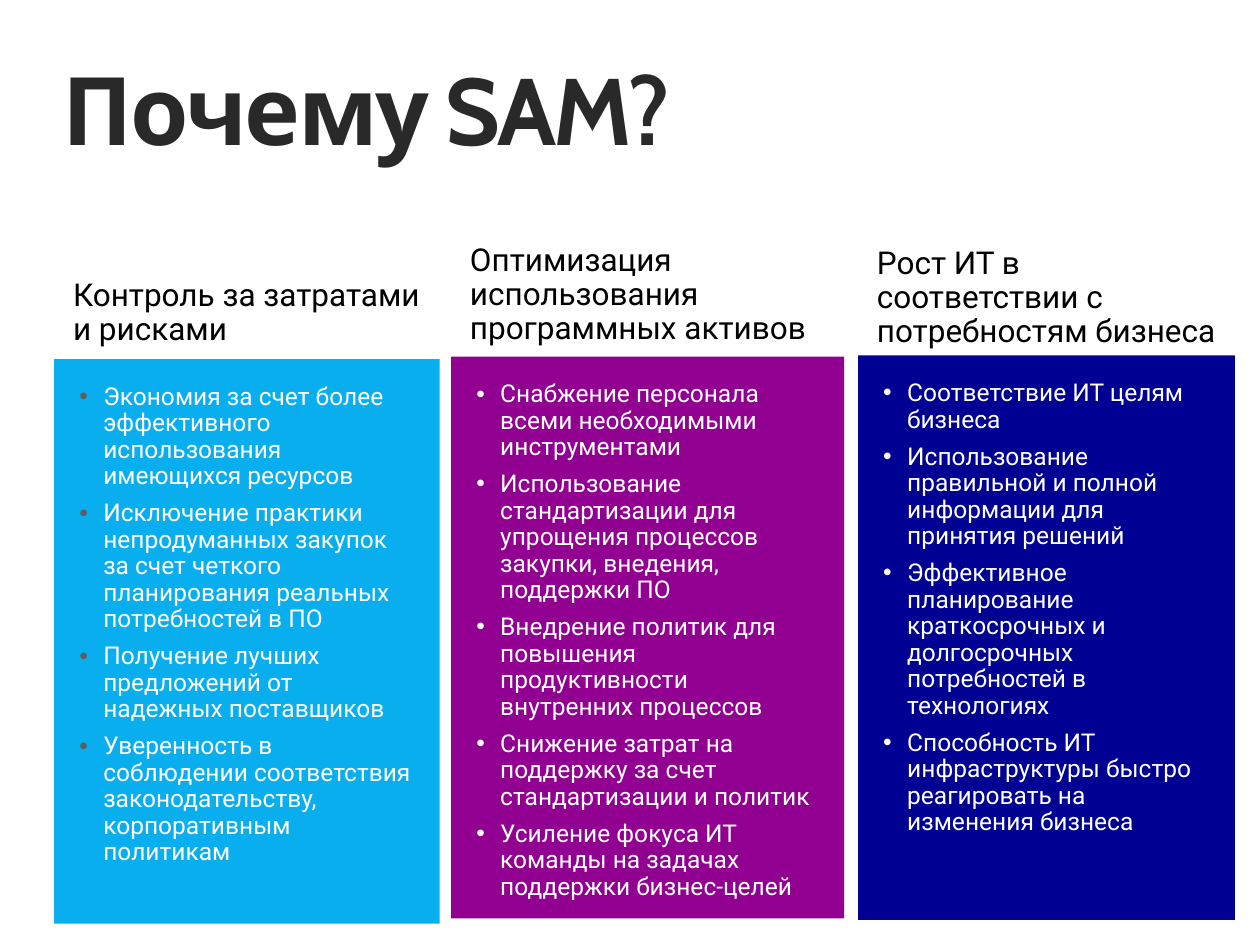
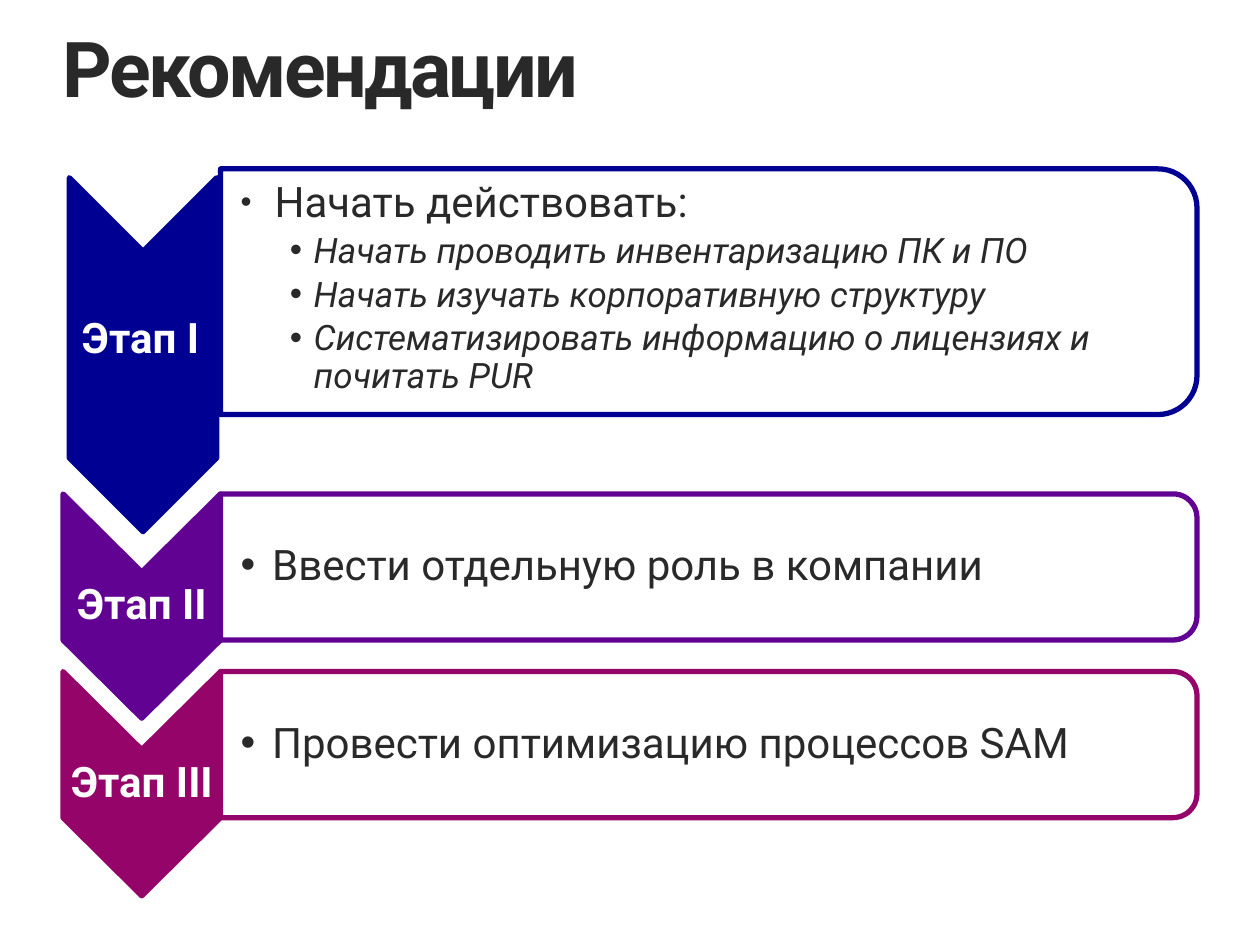
"""Build two slides on software asset management: reasons and recommended stages."""
import math

from lxml import etree
from pptx import Presentation
from pptx.dml.color import RGBColor
from pptx.enum.shapes import MSO_SHAPE
from pptx.enum.text import MSO_ANCHOR, PP_ALIGN
from pptx.oxml.ns import qn
from pptx.util import Inches, Pt

RECT, CHEVRON = MSO_SHAPE.RECTANGLE, MSO_SHAPE.CHEVRON
TOP, MIDDLE, BOTTOM = MSO_ANCHOR.TOP, MSO_ANCHOR.MIDDLE, MSO_ANCHOR.BOTTOM
LEFT, CENTER = PP_ALIGN.LEFT, PP_ALIGN.CENTER

COLORS = {"white": "FFFFFF", "black": "000000", "ink": "292929", "grey": "5E5E5E",
          "sky": "09AEEF", "magenta": "910091", "navy": "000092",
          "violet": "610293", "plum": "950469"}
BODY_FONT = "Roboto"

REASONS_TITLE = "Почему SAM?"
REASONS = [
    {"heading": "Контроль за затратами и рисками",
     "left": 0.43, "top": 2.85, "width": 3.06, "height": 4.48,
     "fill": "sky", "bullet": "grey",
     "points": [
         "Экономия за счет более эффективного использования имеющихся ресурсов",
         "Исключение практики непродуманных закупок за счет четкого планирования "
         "реальных потребностей в ПО",
         "Получение лучших предложений от надежных поставщиков",
         "Уверенность в соблюдении соответствия законодательству, корпоративным политикам"]},
    {"heading": "Оптимизация использования программных активов",
     "left": 3.58, "top": 2.83, "width": 3.12, "height": 4.46,
     "fill": "magenta", "bullet": "white",
     "points": [
         "Снабжение персонала всеми необходимыми инструментами",
         "Использование стандартизации для упрощения процессов закупки, внедения, поддержки ПО",
         "Внедрение политик для повышения продуктивности внутренних процессов",
         "Снижение затрат на поддержку за счет стандартизации и политик",
         "Усиление фокуса ИТ команды на задачах поддержки бизнес-целей"]},
    {"heading": "Рост ИТ в соответствии с потребностям бизнеса",
     "left": 6.81, "top": 2.82, "width": 2.99, "height": 4.48,
     "fill": "navy", "bullet": "white",
     "points": [
         "Соответствие ИТ целям бизнеса",
         "Использование правильной и полной информации для принятия решений",
         "Эффективное планирование краткосрочных и долгосрочных потребностей в технологиях",
         "Способность ИТ инфраструктуры быстро реагировать на изменения бизнеса"]},
]
HEADING_HEIGHT = 1.07
HEADING_TOPS = (1.79, 1.78, 1.8)

STAGES_TITLE = "Рекомендации"
FIRST_STAGE = ("Этап I", "Начать действовать:", [
    "Начать проводить инвентаризацию ПК и ПО",
    "Начать изучать корпоративную структуру",
    "Систематизировать информацию о лицензиях и почитать PUR"])
LATER_STAGES = [("Этап II", "Ввести отдельную роль в компании", "violet"),
                ("Этап III", "Провести оптимизацию процессов SAM", "plum")]
STAGE_LEFT, STAGE_WIDTH, STAGE_HEIGHT, STAGE_POINT = 0.5, 1.25, 1.16, 0.62
STAGE_TOP, STAGE_PITCH = 3.92, 1.41
TASK_LEFT, TASK_WIDTH = 1.75, 7.75
ARC_STEPS = 12


def rgb(name):
    return RGBColor.from_string(COLORS[name])


def paint(shape, fill, line=None):
    shape.shadow.inherit = False
    shape.fill.solid()
    shape.fill.fore_color.rgb = rgb(fill)
    if line is None:
        shape.line.fill.background()
        return shape
    shape.line.color.rgb = rgb(line)
    shape.line.width = Pt(3)
    etree.SubElement(shape.line._ln, qn("a:round"))
    return shape


def write(shape, paragraphs, insets=(0.1, 0.05, 0.1, 0.05), anchor=TOP, **shared):
    """Fill a shape with (text, format) paragraphs; shared formats are defaults."""
    frame = shape.text_frame
    frame.word_wrap = True
    frame.vertical_anchor = anchor
    (frame.margin_left, frame.margin_top,
     frame.margin_right, frame.margin_bottom) = map(Inches, insets)
    for index, (text, own) in enumerate(paragraphs):
        style = {**shared, **own}
        paragraph = frame.paragraphs[0] if index == 0 else frame.add_paragraph()
        paragraph.alignment = style.get("align", LEFT)
        paragraph.line_spacing = style.get("spacing", 0.9)
        if index and "before" in style:
            paragraph.space_before = Pt(style["before"])
        if "after" in style:
            paragraph.space_after = Pt(style["after"])
        if "bullet" in style:
            add_bullet(paragraph, **style["bullet"])
        run = paragraph.add_run()
        run.text = text
        font = run.font
        font.name = style.get("font", BODY_FONT)
        font.size = Pt(style["size"])
        font.bold = style.get("bold", False)
        font.italic = style.get("italic", False)
        font.color.rgb = rgb(style["color"])
        if "tracking" in style:
            run._r.get_or_add_rPr().set("spc", str(int(style["tracking"] * 100)))


def add_bullet(paragraph, color, left, hang, percent=100):
    properties = paragraph._p.get_or_add_pPr()
    properties.set("marL", str(Inches(left)))
    properties.set("indent", str(-Inches(hang)))
    bullet_color = etree.SubElement(properties, qn("a:buClr"))
    etree.SubElement(bullet_color, qn("a:srgbClr"), val=COLORS[color])
    etree.SubElement(properties, qn("a:buSzPct"), val=str(percent * 1000))
    etree.SubElement(properties, qn("a:buFont"), typeface="Arial")
    etree.SubElement(properties, qn("a:buChar"), char="•")


def add_box(slide, kind, left, top, width, height):
    return slide.shapes.add_shape(kind, *map(Inches, (left, top, width, height)))


def add_text_box(slide, left, top, width, height):
    return slide.shapes.add_textbox(*map(Inches, (left, top, width, height)))


def add_title(slide, text, top, height, size, font=BODY_FONT):
    write(add_text_box(slide, 0.5, top, 9, height), [(text, {})], insets=(0, 0, 0, 0),
          size=size, font=font, color="ink", bold=True, tracking=-1.5)


def add_outline(slide, points):
    corners = [(Inches(x), Inches(y)) for x, y in points]
    builder = slide.shapes.build_freeform(*corners[0])
    builder.add_line_segments(corners[1:], close=True)
    return builder.convert_to_shape()


def add_task_box(slide, top, height, radius, line):
    """Draw a box whose two right corners are rounded."""
    right, bottom = TASK_LEFT + TASK_WIDTH, top + height
    points = [(TASK_LEFT, bottom), (TASK_LEFT, top)]
    for center_y, start in ((top + radius, -90), (bottom - radius, 0)):
        for step in range(ARC_STEPS + 1):
            angle = math.radians(start + 90 * step / ARC_STEPS)
            points.append((right - radius + radius * math.cos(angle),
                           center_y + radius * math.sin(angle)))
    return paint(add_outline(slide, points), "white", line)


def add_stage_arrow(slide, top, color):
    middle, right = STAGE_LEFT + STAGE_WIDTH / 2, STAGE_LEFT + STAGE_WIDTH
    bottom = top + STAGE_HEIGHT
    points = [(right, top), (right, bottom), (middle, bottom + STAGE_POINT),
              (STAGE_LEFT, bottom), (STAGE_LEFT, top), (middle, top + STAGE_POINT)]
    return paint(add_outline(slide, points), color, color)


def build_reasons(slide):
    add_title(slide, REASONS_TITLE, 0.51, 0.82, 54, "Cabin")
    for reason, heading_top in zip(REASONS, HEADING_TOPS):
        left, width = reason["left"], reason["width"]
        heading = paint(add_box(slide, RECT, left, heading_top, width, HEADING_HEIGHT), "white")
        write(heading, [(reason["heading"], {})], insets=(0.15, 0.05, 0.15, 0.1),
              anchor=BOTTOM, size=18, color="black")
        panel = paint(add_box(slide, RECT, left, reason["top"], width, reason["height"]),
                      reason["fill"])
        write(panel, [(point, {}) for point in reason["points"]],
              insets=(0.2, 0.2, 0.2, 0.05), size=14, color="white", before=6,
              bullet={"color": reason["bullet"], "left": 0.19, "hang": 0.19})


def build_stages(slide):
    add_title(slide, STAGES_TITLE, 0.25, 0.67, 44)
    for index, (stage, task, color) in enumerate(LATER_STAGES):
        top = STAGE_TOP + index * STAGE_PITCH
        write(add_stage_arrow(slide, top, color), [(stage, {})],
              insets=(0.01, 0.64, 0.01, 0.64), anchor=MIDDLE, align=CENTER,
              size=24, color="white", bold=True)
        write(add_task_box(slide, top, STAGE_HEIGHT, 0.19, color), [(task, {})],
              insets=(0.16, 0.07, 0.07, 0.07), anchor=MIDDLE, size=24, color="ink",
              bullet={"color": "ink", "left": 0.25, "hang": 0.25})

    stage, task, steps = FIRST_STAGE
    task_bullet = {"color": "ink", "left": 0.27, "hang": 0.27, "percent": 75}
    step_style = {"size": 20, "italic": True,
                  "bullet": {"color": "ink", "left": 0.58, "hang": 0.19}}
    write(add_task_box(slide, 1.34, 1.95, 0.31, "navy"),
          [(task, {"size": 24, "bullet": task_bullet})] + [(step, step_style) for step in steps],
          insets=(0.16, 0.1, 0.1, 0.1), color="ink", after=3.5)
    arrow = paint(add_box(slide, CHEVRON, -0.27, 2.23, 2.81, 1.17), "navy", "navy")
    arrow.rotation = 90
    write(add_text_box(slide, 0.55, 2.42, 1.48, 0.5), [(stage, {})],
          size=24, color="white", bold=True, spacing=1.0)


def main():
    deck = Presentation()
    deck.slide_width, deck.slide_height = Inches(10), Inches(7.5)
    for build in (build_reasons, build_stages):
        build(deck.slides.add_slide(deck.slide_layouts[6]))
    deck.save("out.pptx")


if __name__ == "__main__":
    main()
